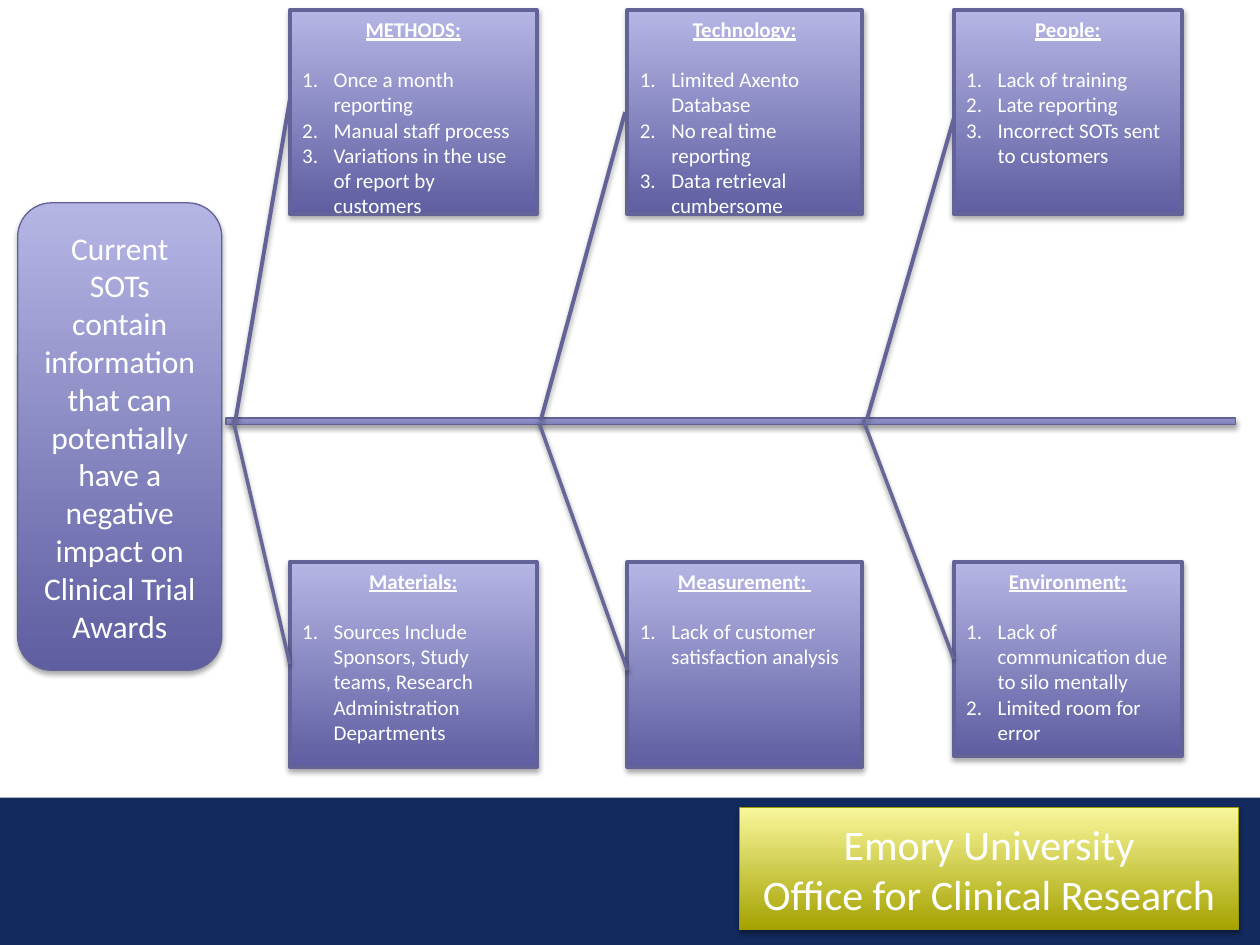
from lxml import etree
from pptx import Presentation
from pptx import util as u
from pptx.dml.color import RGBColor
from pptx.enum import shapes, text
from pptx.oxml.ns import qn

COLORS = {
    "navy": "122A5D", "white": "FFFFFF", "black": "000000",
    "violet_dark": "5E5EA1", "violet_light": "B5B5E5",
    "violet_edge": "636397", "bone": "666699",
    "gold_dark": "A4A200", "gold_light": "F9F79B", "gold_edge": "A09E00",
}
VIOLET = ("violet_dark", "violet_light", "violet_edge")
GOLD = ("gold_dark", "gold_light", "gold_edge")
FONT = "Calibri"
TOP_ROW, BOTTOM_ROW = 0.08, 4.46
TOP_HEIGHT = 1.62
COLUMNS = [(2.3, 1.96), (4.98, 1.86), (7.57, 1.81)]

TOP_CAUSES = [
    ("METHODS:", ["Once a month reporting", "Manual staff process",
                  "Variations in the use of report by customers"],
     (0.44, 0, 2.01, -0.22)),
    ("Technology:", ["Limited Axento Database", "No real time reporting",
                     "Data retrieval cumbersome"],
     (0.5, -0.01, 2.01, -0.37)),
    ("People:", ["Lack of training", "Late reporting",
                 "Incorrect SOTs sent to customers"],
     (0.53, 0, 2, -0.38)),
]
BOTTOM_CAUSES = [
    ("Materials:", ["Sources Include Sponsors, Study teams, Research "
                    "Administration Departments"],
     1.63, (1.85, 3.33), 5.27),
    ("Measurement: ", ["Lack of customer satisfaction analysis"],
     1.63, (4.28, 3.36), 5.32),
    ("Environment:", ["Lack of communication due to silo mentally",
                      "Limited room for error"],
     1.54, (6.85, 3.33), 5.23),
]


def rgb(name):
    return RGBColor.from_string(COLORS[name])


def add_shadow(shape, opacity=35, distance=1.8):
    effects = etree.SubElement(shape.element.spPr, qn("a:effectLst"))
    shadow = etree.SubElement(
        effects, qn("a:outerShdw"), blurRad=str(u.Pt(3.1)),
        dist=str(u.Pt(distance)), dir="5400000", rotWithShape="0")
    color = etree.SubElement(shadow, qn("a:srgbClr"), val=COLORS["black"])
    etree.SubElement(color, qn("a:alpha"), val=str(opacity * 1000))


def add_panel(page, kind, place, palette=VIOLET, line_width=0.75):
    panel = page.shapes.add_shape(kind, *map(u.Inches, place))
    dark, light, edge = palette
    panel.fill.gradient()
    panel.fill.gradient_angle = 90
    for stop, name, position in zip(panel.fill.gradient_stops, (dark, light), (0, 1)):
        stop.color.rgb = rgb(name)
        stop.position = position
    panel.line.color.rgb = rgb(edge)
    panel.line.width = u.Pt(line_width)
    add_shadow(panel)
    return panel


def style(para, size, align, bold=False):
    para.alignment = align
    font = para.font
    font.name, font.size, font.bold, font.underline = FONT, u.Pt(size), bold, bold
    font.color.rgb = rgb("white")


def write_centred(panel, lines, size):
    frame = panel.text_frame
    frame.word_wrap = True
    frame.vertical_anchor = text.MSO_ANCHOR.MIDDLE
    frame.text = "\n".join(lines)
    for para in frame.paragraphs:
        style(para, size, text.PP_ALIGN.CENTER)


def number(para):
    props = para._p.get_or_add_pPr()
    props.set("marL", str(u.Inches(0.25)))
    props.set("indent", str(u.Inches(-0.25)))
    etree.SubElement(props, qn("a:buFont"), typeface="+mj-lt")
    etree.SubElement(props, qn("a:buAutoNum"), type="arabicPeriod")


def add_cause(page, kind, place, heading, items):
    box = add_panel(page, kind, place, line_width=2.25)
    frame = box.text_frame
    frame.word_wrap = True
    frame.vertical_anchor = text.MSO_ANCHOR.TOP
    frame.text = "\n".join([heading, *items])
    title, *entries = frame.paragraphs
    title.space_after = u.Pt(14.4)
    style(title, 12, text.PP_ALIGN.CENTER, bold=True)
    for para in entries:
        number(para)
        style(para, 12, text.PP_ALIGN.LEFT)
    return box


def add_bone(page, start, end):
    bone = page.shapes.add_connector(
        shapes.MSO_CONNECTOR.STRAIGHT, *map(u.Inches, (*start, *end)))
    bone.line.color.rgb = rgb("bone")
    bone.line.width = u.Pt(2)
    add_shadow(bone, opacity=38, distance=1.6)


def add_footer_band(page):
    band = page.shapes.add_shape(
        shapes.MSO_SHAPE.RECTANGLE, *map(u.Inches, (0, 6.33, 10, 1.17)))
    band.shadow.inherit = False
    band.fill.solid()
    band.fill.fore_color.rgb = rgb("navy")
    band.line.fill.background()


def main():
    deck = Presentation()
    deck.slide_width, deck.slide_height = u.Inches(10), u.Inches(7.5)
    page = deck.slides.add_slide(deck.slide_layouts[6])
    kinds = shapes.MSO_SHAPE

    add_footer_band(page)
    effect = add_panel(page, kinds.ROUNDED_RECTANGLE, (0.14, 1.61, 1.62, 3.71))
    write_centred(effect, ["Current SOTs contain information that can potentially "
                           "have a negative impact on Clinical Trial Awards"], 18)
    add_panel(page, kinds.MATH_MINUS, (0.35, 3.23, 10.9, 0.23))

    for (left, width), (heading, items, pointer) in zip(COLUMNS, TOP_CAUSES):
        box = add_cause(page, kinds.LINE_CALLOUT_1,
                        (left, TOP_ROW, width, TOP_HEIGHT), heading, items)
        for index, value in enumerate(pointer):
            box.adjustments[index] = value

    for (left, width), (heading, items, height, start, end_y) in zip(COLUMNS, BOTTOM_CAUSES):
        add_cause(page, kinds.RECTANGLE,
                  (left, BOTTOM_ROW, width, height), heading, items)
        add_bone(page, start, (left, end_y))

    office = add_panel(page, kinds.RECTANGLE, (5.87, 6.41, 3.96, 0.97), GOLD)
    write_centred(office, ["Emory University", "Office for Clinical Research"], 24)
    deck.save("out.pptx")


if __name__ == "__main__":
    main()
